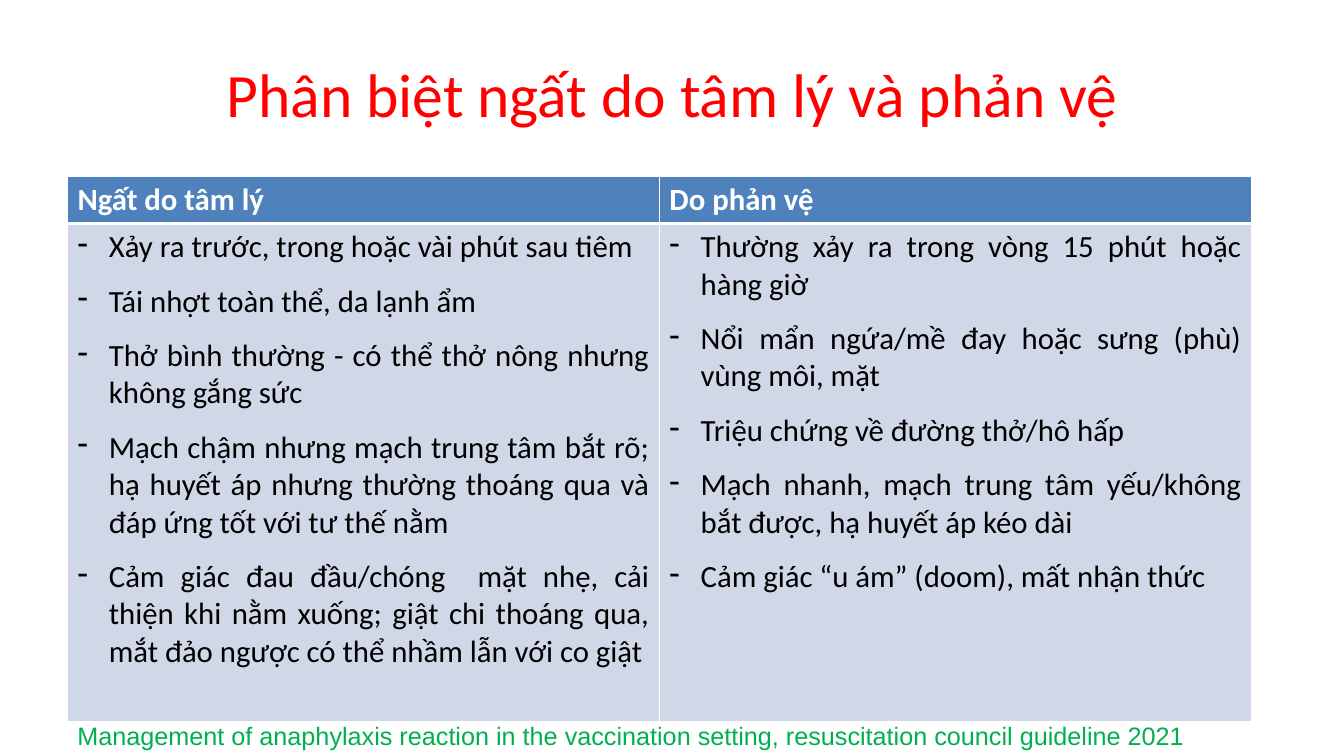
from lxml import etree
from pptx import Presentation
from pptx import util as u
from pptx.dml.color import RGBColor
from pptx.enum import text as t
from pptx.oxml import ns


def write(frame, *lines, size, color, font="Calibri", bold=False, align=None,
          anchor=t.MSO_ANCHOR.TOP, bullet=None, gap=0):
    """Fill a text frame with one paragraph per line."""
    frame.word_wrap = True
    frame.vertical_anchor = anchor
    for index, line in enumerate(lines):
        paragraph = frame.add_paragraph() if index else frame.paragraphs[0]
        paragraph.alignment = align
        if bullet:
            properties = paragraph._p.get_or_add_pPr()
            properties.set("marL", str(u.Inches(0.31)))
            properties.set("indent", str(-u.Inches(0.31)))
            etree.SubElement(properties, ns.qn("a:buFontTx"))
            etree.SubElement(properties, ns.qn("a:buChar")).set("char", bullet)
        if gap:
            paragraph.space_before = u.Pt(gap if index else 0)
            paragraph.space_after = u.Pt(gap)
        run = paragraph.add_run()
        run.text = line
        run.font.name = font
        run.font.size = u.Pt(size)
        run.font.bold = bold
        run.font.color.rgb = RGBColor.from_string(color)


def style_cell(cell, fill, bottom):
    """Set the fill of a cell and its white borders, widths in points."""
    cell.fill.solid()
    cell.fill.fore_color.rgb = RGBColor.from_string(fill)
    properties = cell._tc.get_or_add_tcPr()
    widths = {"a:lnL": 1, "a:lnR": 1, "a:lnT": 1, "a:lnB": bottom}
    for position, (side, width) in enumerate(widths.items()):
        border = etree.Element(ns.qn(side), w=str(u.Pt(width)))
        solid = etree.SubElement(border, ns.qn("a:solidFill"))
        etree.SubElement(solid, ns.qn("a:srgbClr"), val="FFFFFF")
        properties.insert(position, border)


presentation = Presentation()
presentation.slide_width = u.Inches(13.33)
presentation.slide_height = u.Inches(7.5)
slide = presentation.slides.add_slide(presentation.slide_layouts[6])
left = u.Inches(0.67)

# Title
title = slide.shapes.add_textbox(left, u.Inches(0.3), u.Inches(12), u.Inches(1.25))
write(title.text_frame, "Phân biệt ngất do tâm lý và phản vệ", size=44, color="FF0000",
      align=t.PP_ALIGN.CENTER, anchor=t.MSO_ANCHOR.MIDDLE)

# Comparison table: heading and signs of each cause
causes = {
    "Ngất do tâm lý": [
        "Xảy ra trước, trong hoặc vài phút sau tiêm",
        "Tái nhợt toàn thể, da lạnh ẩm",
        "Thở bình thường - có thể thở nông nhưng không gắng sức",
        "Mạch chậm nhưng mạch trung tâm bắt rõ; hạ huyết áp nhưng thường thoáng qua "
        "và đáp ứng tốt với tư thế nằm",
        "Cảm giác đau đầu/chóng  mặt nhẹ, cải thiện khi nằm xuống; giật chi thoáng qua, "
        "mắt đảo ngược có thể nhầm lẫn với co giật",
    ],
    "Do phản vệ": [
        "Thường xảy ra trong vòng 15 phút hoặc hàng giờ",
        "Nổi mẩn ngứa/mề đay hoặc sưng (phù) vùng môi, mặt",
        "Triệu chứng về đường thở/hô hấp",
        "Mạch nhanh, mạch trung tâm yếu/không bắt được, hạ huyết áp kéo dài",
        "Cảm giác “u ám” (doom), mất nhận thức",
    ],
}
table = slide.shapes.add_table(2, len(causes), left, u.Inches(1.75),
                               u.Inches(11.74), u.Inches(5.4)).table
table.rows[0].height = u.Inches(0.46)
table.rows[1].height = u.Inches(4.94)
for column, (heading, signs) in enumerate(causes.items()):
    table.columns[column].width = u.Inches(5.87)
    header, body = table.cell(0, column), table.cell(1, column)
    style_cell(header, "4F81BD", bottom=3)
    write(header.text_frame, heading, size=22, color="FFFFFF", bold=True,
          align=t.PP_ALIGN.JUSTIFY)
    header.vertical_anchor = t.MSO_ANCHOR.MIDDLE
    style_cell(body, "D0D8E8", bottom=1)
    # The top edge of the body continues the thick line under the header
    body._tc.tcPr.find(ns.qn("a:lnT")).set("w", str(u.Pt(3)))
    write(body.text_frame, *signs, size=22, color="000000",
          align=t.PP_ALIGN.JUSTIFY, bullet="-", gap=6)

# Reference
reference = slide.shapes.add_textbox(left, u.Inches(7.1), u.Inches(12.66), u.Inches(0.4))
write(reference.text_frame,
      "Management of anaphylaxis reaction in the vaccination setting, "
      "resuscitation council guideline 2021",
      size=18, color="00B050", font="Arial")

presentation.save("out.pptx")
